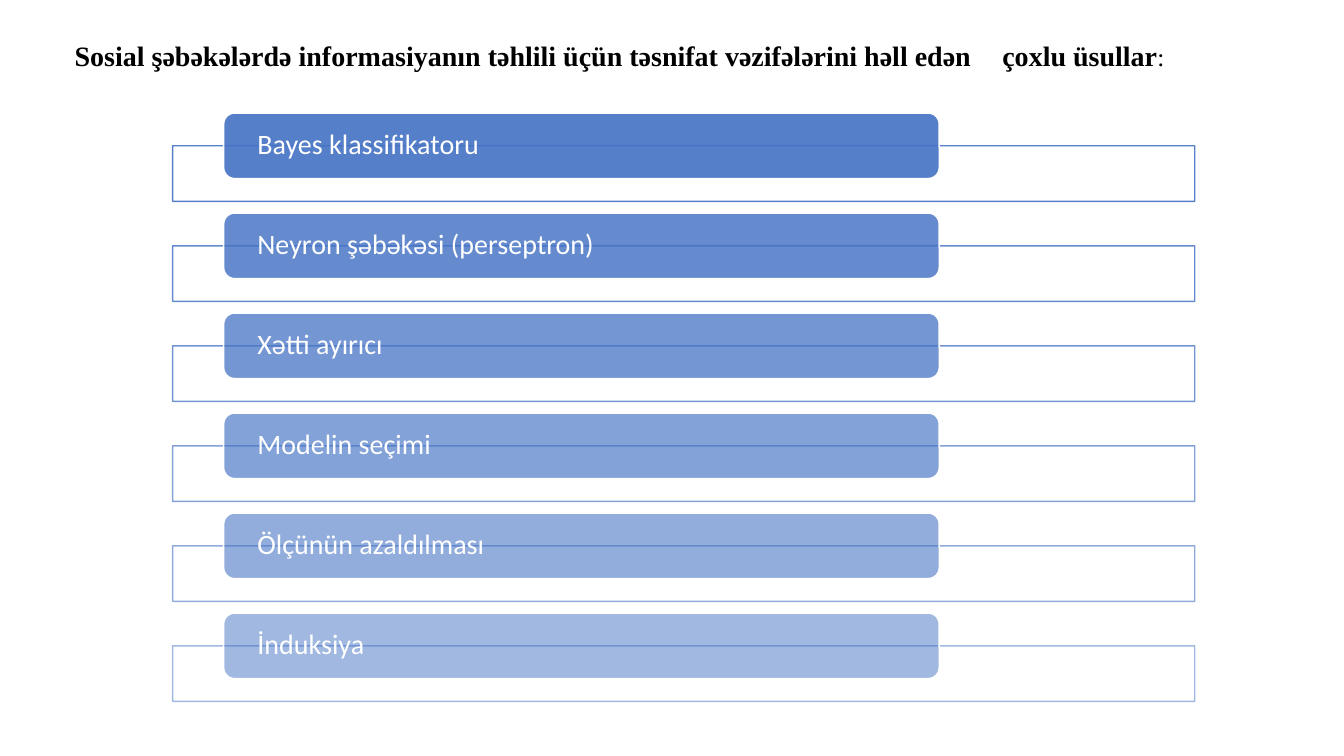
from lxml import etree
from pptx import Presentation
from pptx.enum import shapes, text
from pptx.dml.color import RGBColor
from pptx.oxml import ns
from pptx.util import Cm, Pt

COLORS = {"blue": "4472C4", "white": "FFFFFF", "black": "000000"}
METHODS = [
    "Bayes klassifikatoru",
    "Neyron şəbəkəsi (perseptron)",
    "Xətti ayırıcı",
    "Modelin seçimi",
    "Ölçünün azaldılması",
    "İnduksiya",
]


def paint(fill, color, opacity=100):
    """Solid colour with an opacity in percent."""
    fill.solid()
    fill.fore_color.rgb = RGBColor.from_string(COLORS[color])
    if opacity < 100:
        for tone in fill._xPr.iter(ns.qn("a:srgbClr")):
            etree.SubElement(tone, ns.qn("a:alpha"), val=str(opacity * 1000))


def style_span(span, font, size, color, bold=False):
    span.font.name = font
    span.font.size = Pt(size)
    span.font.bold = bold
    span.font.color.rgb = RGBColor.from_string(COLORS[color])


def add_box(page, kind, left, top, width, height):
    box = page.shapes.add_shape(kind, Cm(left), Cm(top), Cm(width), Cm(height))
    box.shadow.inherit = False
    box.line.width = Pt(1)
    return box


def add_title(page, left, top, width, height):
    box = page.shapes.add_textbox(Cm(left), Cm(top), Cm(width), Cm(height))
    box.text_frame.word_wrap = True
    para = box.text_frame.paragraphs[0]
    para.line_spacing = 1.5
    para.space_before = Pt(8)
    heading, colon = para.add_run(), para.add_run()
    heading.text = ("Sosial şəbəkələrdə informasiyanın təhlili üçün təsnifat "
                    "vəzifələrini həll edən\tçoxlu üsullar")
    colon.text = ":"
    style_span(heading, "Times New Roman", 20, "black", bold=True)
    style_span(colon, "Times New Roman", 18, "black")
    # Tab stop that sets the last two words apart
    stops = etree.SubElement(para._p.get_or_add_pPr(), ns.qn("a:tabLst"))
    etree.SubElement(stops, ns.qn("a:tab"), pos=str(Cm(23.38)), algn="l")


def add_method(page, name, opacity, left, top, width):
    pill_height = 1.65
    # Outlined frame, starting at the middle of the pill
    frame = add_box(page, shapes.MSO_SHAPE.RECTANGLE,
                    left, top + pill_height / 2, width, 1.4)
    paint(frame.fill, "white", 90)
    paint(frame.line.fill, "blue", opacity)

    # Pill with the method's name
    pill = add_box(page, shapes.MSO_SHAPE.ROUNDED_RECTANGLE,
                   left + width * 0.05, top, width * 0.7, pill_height)
    paint(pill.fill, "blue", opacity)
    paint(pill.line.fill, "white")
    label = pill.text_frame
    label.text = name
    label.word_wrap = True
    label.vertical_anchor = text.MSO_ANCHOR.MIDDLE
    label.margin_left = label.margin_right = Cm(0.77)
    label.margin_top = label.margin_bottom = 0
    para = label.paragraphs[0]
    para.alignment = text.PP_ALIGN.LEFT
    para.line_spacing = 0.9
    style_span(para.runs[0], "Calibri", 20, "white")


def add_method_list(page, left, top, width, pitch):
    for index, name in enumerate(METHODS):
        add_method(page, name, 90 - 8 * index, left, top + pitch * index, width)


def main():
    deck = Presentation()
    deck.slide_width, deck.slide_height = Cm(33.87), Cm(19.05)
    page = deck.slides.add_slide(deck.slide_layouts[6])
    add_title(page, 1.63, 0.43, 30.56, 1.4)
    add_method_list(page, 4.35, 2.85, 25.76, 2.52)
    deck.save("out.pptx")


if __name__ == "__main__":
    main()
